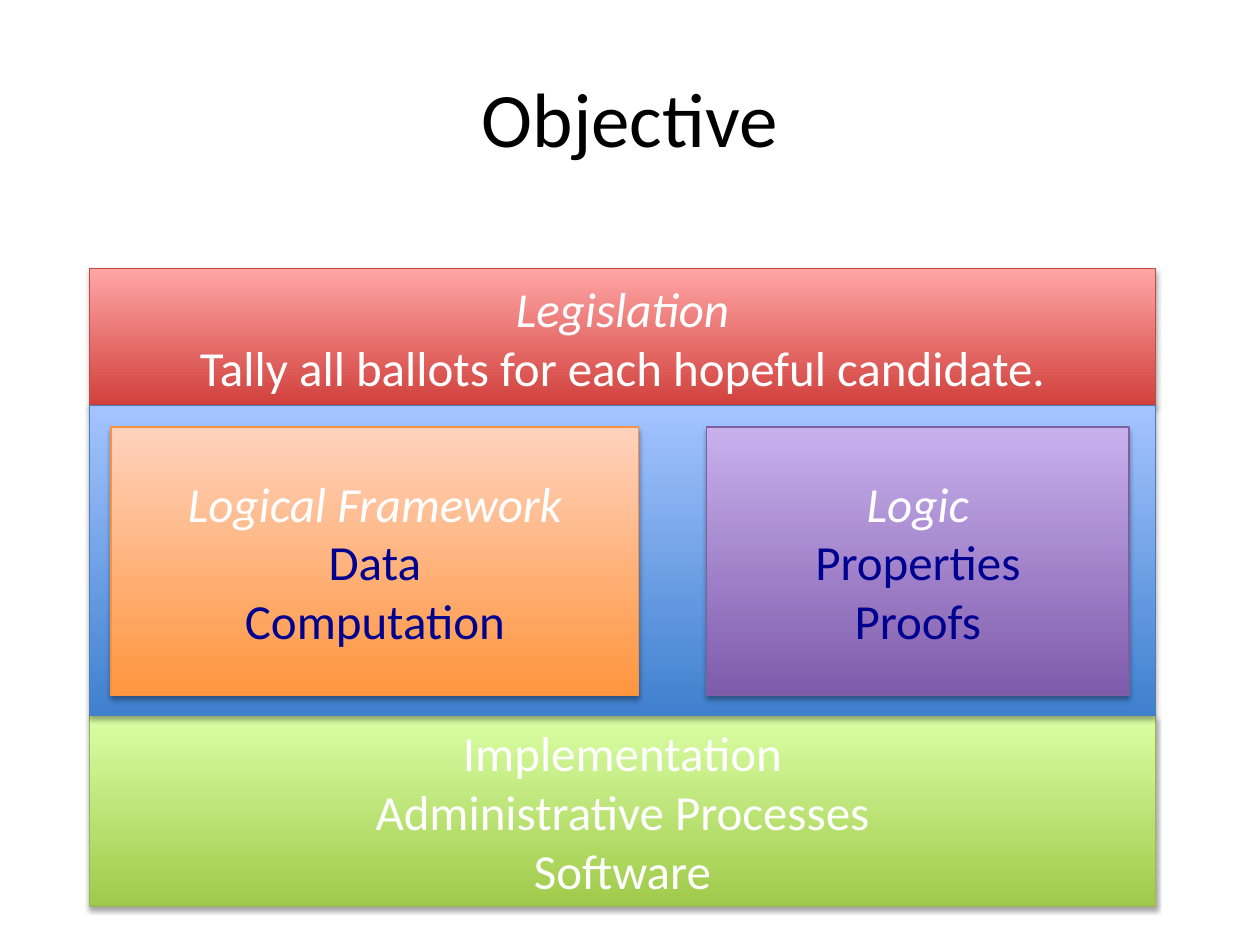
import dataclasses

import lxml.etree
import pptx
import pptx.dml.color
import pptx.enum.shapes
import pptx.enum.text
import pptx.oxml.ns
import pptx.util

Inches = pptx.util.Inches
Pt = pptx.util.Pt


@dataclasses.dataclass(frozen=True)
class Theme:
    font: str = "Calibri"
    title_size: int = 44
    body_size: int = 28
    black: str = "000000"
    white: str = "FFFFFF"
    navy: str = "000090"
    red: tuple = ("D1403C", "FFA6A5", "BF4C48")
    blue: tuple = ("3F80CE", "A4C4FF", "4B7EBC")
    green: tuple = ("A0CA4A", "DAFFA5", "98B955")
    orange: tuple = ("FF953E", "FFD2BD", "F69240")
    purple: tuple = ("7F5BAB", "C8B0ED", "7D60A0")


THEME = Theme()


def rgb(value):
    return pptx.dml.color.RGBColor.from_string(value)


def add_lines(shape, lines, size):
    frame = shape.text_frame
    frame.word_wrap = True
    frame.vertical_anchor = pptx.enum.text.MSO_ANCHOR.MIDDLE
    for index, (text, color, italic) in enumerate(lines):
        paragraph = frame.add_paragraph() if index else frame.paragraphs[0]
        paragraph.text = text
        paragraph.alignment = pptx.enum.text.PP_ALIGN.CENTER
        paragraph.font.name = THEME.font
        paragraph.font.size = Pt(size)
        paragraph.font.italic = italic
        paragraph.font.color.rgb = rgb(color)


def add_shadow(shape):
    shape.shadow.inherit = False
    qn = pptx.oxml.ns.qn
    effects = shape._element.spPr.find(qn("a:effectLst"))
    shadow = lxml.etree.SubElement(
        effects, qn("a:outerShdw"), blurRad=str(Pt(3.1)), dist=str(Pt(1.8)),
        dir="5400000", rotWithShape="0")
    color = lxml.etree.SubElement(shadow, qn("a:srgbClr"), val=THEME.black)
    lxml.etree.SubElement(color, qn("a:alpha"), val="35000")


def add_title(slide, text):
    title = slide.shapes.add_textbox(Inches(0.5), Inches(0.3), Inches(9), Inches(1.25))
    add_lines(title, [(text, THEME.black, False)], THEME.title_size)


def add_block(slide, left, top, width, height, colors, lines=()):
    block = slide.shapes.add_shape(
        pptx.enum.shapes.MSO_SHAPE.RECTANGLE,
        Inches(left), Inches(top), Inches(width), Inches(height))
    bottom_color, top_color, line_color = colors
    block.fill.gradient()
    block.fill.gradient_angle = 90
    for stop, position, color in zip(
            block.fill.gradient_stops, (0, 1), (bottom_color, top_color)):
        stop.position = position
        stop.color.rgb = rgb(color)
    block.line.color.rgb = rgb(line_color)
    block.line.width = Pt(0.75)
    add_shadow(block)
    add_lines(block, lines, THEME.body_size)


def main():
    presentation = pptx.Presentation()
    presentation.slide_width = Inches(10)
    presentation.slide_height = Inches(7.5)
    slide = presentation.slides.add_slide(presentation.slide_layouts[6])

    left, width = 0.71, 8.46
    legislation_top, framework_top, implementation_top, bottom = 2.13, 3.22, 5.68, 7.19
    inner_top, inner_height = framework_top + 0.17, 2.13

    add_title(slide, "Objective")
    add_block(slide, left, implementation_top, width, bottom - implementation_top,
              THEME.green,
              [(text, THEME.white, False) for text in
               ("Implementation", "Administrative Processes", "Software")])
    add_block(slide, left, legislation_top, width, framework_top - legislation_top,
              THEME.red,
              [("Legislation", THEME.white, True),
               ("Tally all ballots for each hopeful candidate.", THEME.white, False)])
    add_block(slide, left, framework_top, width, implementation_top - framework_top,
              THEME.blue)

    for inner_left, inner_width, colors, heading, items in (
            (0.88, 4.19, THEME.orange, "Logical Framework", ("Data", "Computation")),
            (5.61, 3.35, THEME.purple, "Logic", ("Properties", "Proofs"))):
        lines = [(heading, THEME.white, True)]
        lines += [(item, THEME.navy, False) for item in items]
        add_block(slide, inner_left, inner_top, inner_width, inner_height, colors, lines)

    presentation.save("out.pptx")


if __name__ == "__main__":
    main()
